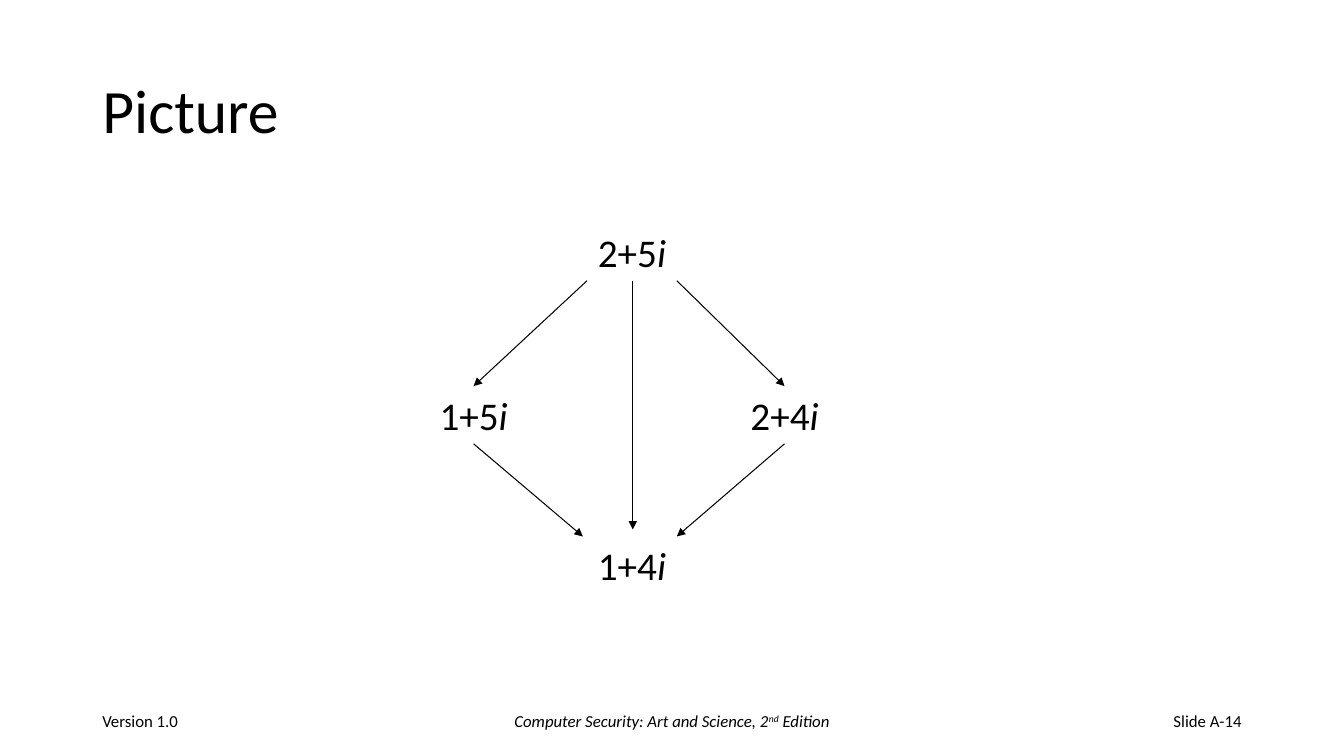
from lxml import etree
from pptx import Presentation
from pptx import util as u
from pptx.dml.color import RGBColor
from pptx.enum import shapes, text
from pptx.oxml import ns

INK = "000000"
LABEL_WIDTH, LABEL_HEIGHT = 64.1, 41.2
FOOTER_TOP, FOOTER_HEIGHT = 500.5, 28.75


def color(hex_value):
    """Turn a hex string into a colour."""
    return RGBColor.from_string(hex_value)


def style(run, size, italic=False):
    """Give a run the slide's font, size and colour."""
    run.font.name = "Calibri"
    run.font.size = u.Pt(size)
    run.font.italic = italic
    run.font.color.rgb = color(INK)


def add_title(slide, wording):
    """Fill and place the title placeholder."""
    title = slide.shapes.title
    title.left, title.top = u.Pt(66), u.Pt(28.75)
    title.width, title.height = u.Pt(828), u.Pt(104.4)
    frame = title.text_frame
    frame.text = wording
    frame.auto_size = text.MSO_AUTO_SIZE.NONE
    frame.vertical_anchor = text.MSO_ANCHOR.MIDDLE
    paragraph = frame.paragraphs[0]
    paragraph.alignment = text.PP_ALIGN.LEFT
    paragraph.line_spacing = 0.9
    style(paragraph.runs[0], 44)


def add_text(slide, left, top, width, height, parts, size, align):
    """Add a text box of (wording, italic) parts and return it."""
    box = slide.shapes.add_textbox(u.Pt(left), u.Pt(top), u.Pt(width), u.Pt(height))
    paragraph = box.text_frame.paragraphs[0]
    paragraph.alignment = align
    for wording, italic in parts:
        run = paragraph.add_run()
        run.text = wording
        style(run, size, italic)
    return box


def add_number(slide, center, top, real_part):
    """Add a complex number centred on a point, ending in an italic i."""
    label = add_text(slide, center - LABEL_WIDTH / 2, top, LABEL_WIDTH, LABEL_HEIGHT,
                     [(real_part, False), ("i", True)], 28, text.PP_ALIGN.CENTER)
    label.text_frame.word_wrap = False
    label.text_frame.auto_size = text.MSO_AUTO_SIZE.SHAPE_TO_FIT_TEXT


def add_arrow(slide, start, end):
    """Add a thin arrow from start to end."""
    arrow = slide.shapes.add_connector(
        shapes.MSO_CONNECTOR.STRAIGHT, *(u.Pt(value) for value in start + end))
    arrow.line.color.rgb = color(INK)
    arrow.line.width = u.Pt(0.75)
    etree.SubElement(arrow.line._get_or_add_ln(), ns.qn("a:tailEnd"), type="triangle")
    etree.SubElement(arrow._element.spPr, ns.qn("a:effectLst"))


def add_footer(slide, left, width, parts, align):
    """Add one part of the footer and return its paragraph."""
    footer = add_text(slide, left, FOOTER_TOP, width, FOOTER_HEIGHT, parts, 12, align)
    footer.text_frame.word_wrap = True
    footer.text_frame.vertical_anchor = text.MSO_ANCHOR.MIDDLE
    return footer.text_frame.paragraphs[0]


def main():
    """Build the slide and save it."""
    deck = Presentation()
    deck.slide_width, deck.slide_height = u.Pt(960), u.Pt(540)
    slide = deck.slides.add_slide(deck.slide_layouts[5])
    add_title(slide, "Picture")

    left, middle, right = 338.3, 451.4, 560.4
    top, level, bottom = 159.3, 275.8, 383.2
    for center, height, real_part in ((left, level, "1+5"), (right, level, "2+4"),
                                      (middle, bottom, "1+4"), (middle, top, "2+5")):
        add_number(slide, center, height, real_part)

    top_foot, level_foot = top + LABEL_HEIGHT, level + LABEL_HEIGHT
    half = LABEL_WIDTH / 2
    for start, end in (((middle - half, top_foot), (left, level)),
                       ((middle + half, top_foot), (right, level)),
                       ((right, level_foot), (middle + half, bottom)),
                       ((left, level_foot), (middle - half - 3, bottom)),
                       ((middle + 0.6, top_foot), (middle + 0.6, bottom - 5))):
        add_arrow(slide, start, end)

    add_footer(slide, 678, 216, [("Slide A-14", False)], text.PP_ALIGN.RIGHT)
    add_footer(slide, 66, 216, [("Version 1.0", False)], text.PP_ALIGN.LEFT)
    book = add_footer(slide, 318, 324,
                      [("Computer Security: Art and Science, 2", True),
                       ("nd", True), (" Edition", True)], text.PP_ALIGN.CENTER)
    book.runs[1]._r.get_or_add_rPr().set("baseline", "30000")
    deck.save("out.pptx")


if __name__ == "__main__":
    main()
